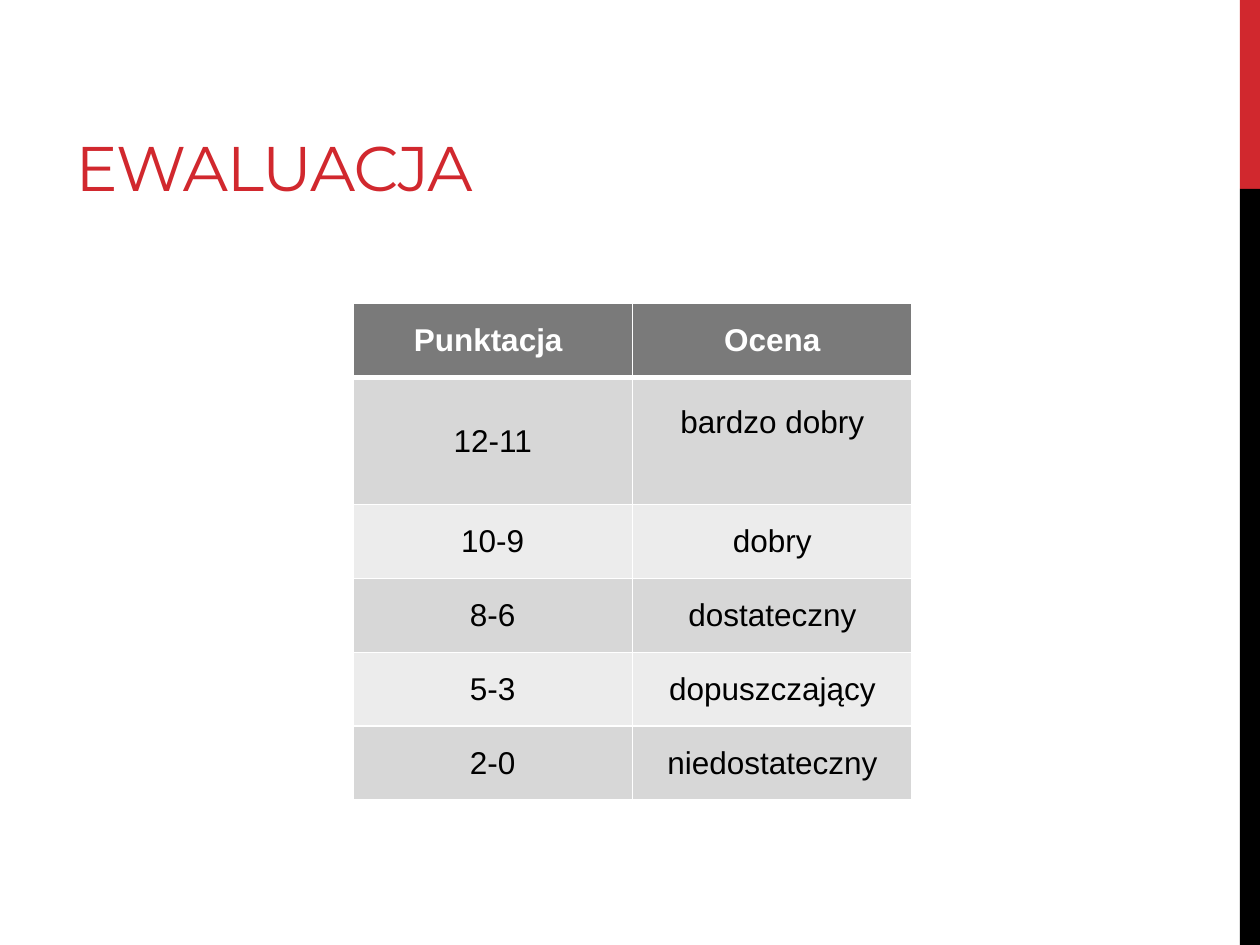
from lxml import etree
from pptx import Presentation
from pptx.dml.color import RGBColor
from pptx.enum.shapes import MSO_SHAPE
from pptx.enum.text import MSO_ANCHOR, MSO_AUTO_SIZE, PP_ALIGN
from pptx.oxml.ns import qn
from pptx.util import Inches, Pt

RED, BLACK, WHITE = "D1282E", "000000", "FFFFFF"
HEAD, DARK, LIGHT = "7A7A7A", "D7D7D7", "ECECEC"
GRADES = [
    ("Punktacja", "Ocena"),
    ("12-11", "bardzo dobry"),
    ("10-9", "dobry"),
    ("8-6", "dostateczny"),
    ("5-3", "dopuszczający"),
    ("2-0", "niedostateczny"),
]


def paint(target, color):
    target.solid()
    target.fore_color.rgb = RGBColor.from_string(color)


def style(font, name, size, color, bold=False):
    font.name, font.size, font.bold = name, Pt(size), bold
    font.color.rgb = RGBColor.from_string(color)


def add_bar(slide, box, color):
    bar = slide.shapes.add_shape(MSO_SHAPE.RECTANGLE, *map(Inches, box))
    bar.shadow.inherit = False
    paint(bar.fill, color)
    bar.line.fill.background()


def set_title(slide, box, text):
    title = slide.shapes.title
    title.left, title.top, title.width, title.height = map(Inches, box)
    frame = title.text_frame
    frame.text = text
    frame.auto_size = MSO_AUTO_SIZE.NONE
    frame.vertical_anchor = MSO_ANCHOR.BOTTOM
    frame.paragraphs[0].alignment = PP_ALIGN.LEFT
    run = frame.paragraphs[0].runs[0]
    style(run.font, "Montserrat", 36, RED)
    run.font._element.set("spc", "-60")


def add_edge(cell, side, width):
    props = cell._tc.get_or_add_tcPr()
    line = etree.SubElement(props, qn(f"a:ln{side}"), w=str(Pt(width)))
    fill = etree.SubElement(line, qn("a:solidFill"))
    etree.SubElement(fill, qn("a:srgbClr"), val=WHITE)


def set_cell(cell, text, row):
    # Borders go before the fill; a thick rule sits under the header
    widths = {"L": 1, "R": 1, "T": 3 if row == 1 else 1, "B": 3 if row == 0 else 1}
    for side, width in widths.items():
        add_edge(cell, side, width)
    paint(cell.fill, HEAD if row == 0 else DARK if row % 2 else LIGHT)
    cell.vertical_anchor = MSO_ANCHOR.MIDDLE
    cell.text_frame.text = text
    para = cell.text_frame.paragraphs[0]
    para.alignment = PP_ALIGN.CENTER
    style(para.runs[0].font, "Arial", 18, BLACK if row else WHITE, row == 0)


def add_grades(slide, box, rows):
    left, top, width, height = box
    tall = 1.01
    low = (height - tall) / (len(rows) - 1)
    table = slide.shapes.add_table(len(rows), 2, *map(Inches, box)).table
    for col in table.columns:
        col.width = Inches(width / 2)
    for r, texts in enumerate(rows):
        table.rows[r].height = Inches(tall if r == 1 else low)
        for c, text in enumerate(texts):
            set_cell(table.cell(r, c), text, r)
    # Two texts sit slightly off centre
    table.cell(0, 0).margin_right = Inches(0.17)
    table.cell(1, 1).margin_bottom = Inches(0.34)


def main():
    deck = Presentation()
    deck.slide_width, deck.slide_height = Inches(10), Inches(7.5)
    slide = deck.slides.add_slide(deck.slide_layouts[5])
    # Side stripe
    add_bar(slide, (9.84, 0, 0.16, 1.5), RED)
    add_bar(slide, (9.84, 1.5, 0.16, 6), BLACK)
    # Title and grading table
    set_title(slide, (0.5, 0.17, 6.33, 1.5), "EWALUACJA")
    add_grades(slide, (2.8, 2.41, 4.44, 3.94), GRADES)
    deck.save("out.pptx")


if __name__ == "__main__":
    main()
